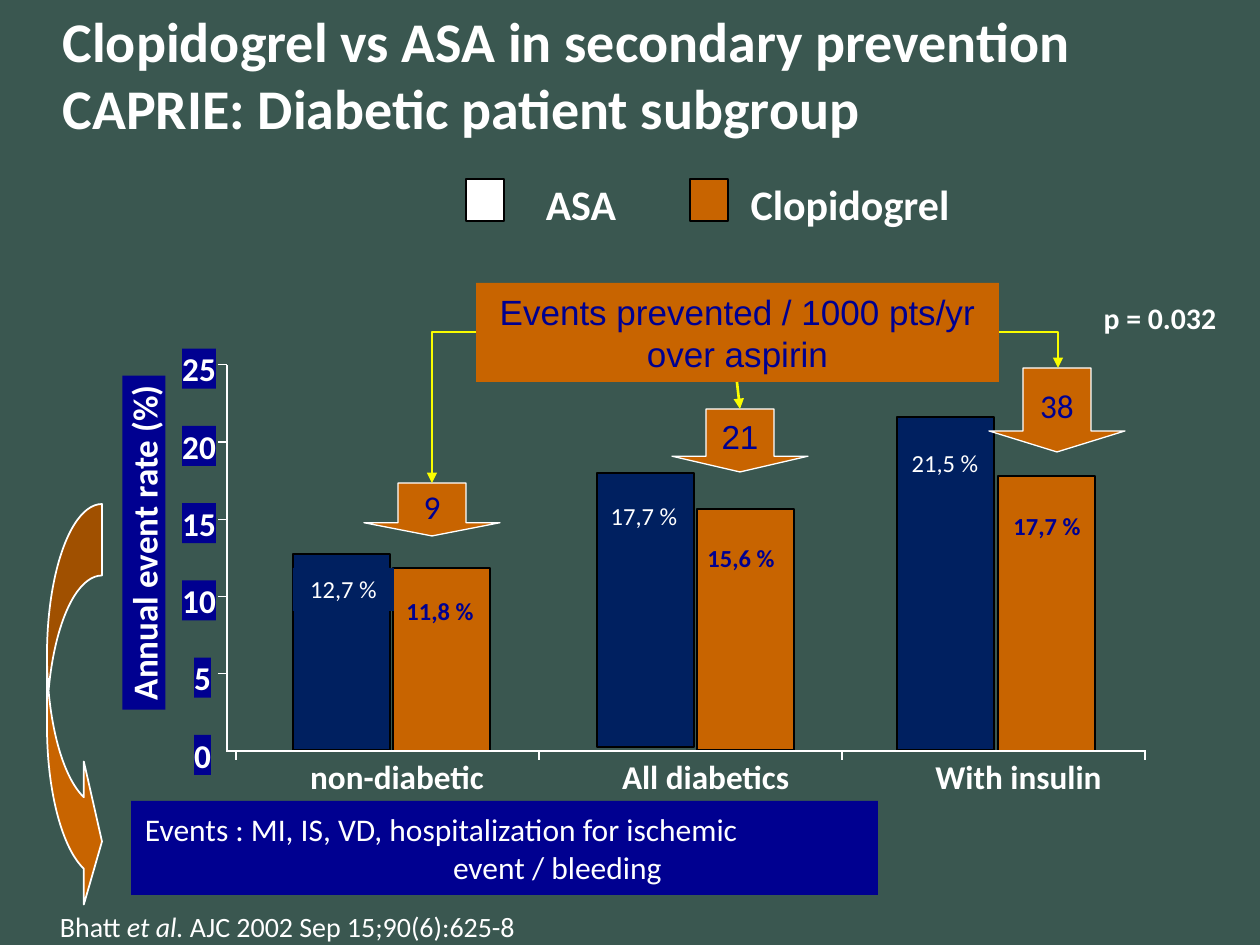
from lxml import etree
from pptx import Presentation
from pptx.dml.color import RGBColor
from pptx.enum.shapes import MSO_CONNECTOR, MSO_SHAPE
from pptx.enum.text import MSO_ANCHOR, MSO_AUTO_SIZE, PP_ALIGN
from pptx.oxml.ns import qn
from pptx.util import Pt

RECT, DOWN, CURVED = MSO_SHAPE.RECTANGLE, MSO_SHAPE.DOWN_ARROW, MSO_SHAPE.CURVED_RIGHT_ARROW
STRAIGHT, ELBOW = MSO_CONNECTOR.STRAIGHT, MSO_CONNECTOR.ELBOW
LEFT, CENTER = PP_ALIGN.LEFT, PP_ALIGN.CENTER
TOP, MIDDLE = MSO_ANCHOR.TOP, MSO_ANCHOR.MIDDLE
SCALE = 914400 / 126
WHITE, BLACK, YELLOW = "FFFFFF", "000000", "FAFD00"
BLUE, NAVY, ORANGE = "000090", "002060", "C86400"
rgb = RGBColor.from_string


def write(para, text, size=19, color=WHITE, bold=False, italic=False, font="Calibri", align=CENTER):
    """Append formatted text to a paragraph; a newline becomes a line break."""
    para.alignment = align
    for i, part in enumerate(text.split("\n")):
        if i:
            para.add_line_break()
        run = para.add_run()
        run.text = part
        run.font.size, run.font.name = Pt(size), font
        run.font.bold, run.font.italic = bold, italic
        run.font.color.rgb = rgb(color)


def put(spot, text="", fill=None, line=None, kind=RECT, pad=(0, 0), wrap=False, anchor=TOP, **style):
    """Place a shape, or a text box when there is no fill."""
    place = [round(n * SCALE) for n in spot]
    if fill:
        shape = slide.shapes.add_shape(kind, *place)
        shape.shadow.inherit = False
        shape.fill.solid()
        shape.fill.fore_color.rgb = rgb(fill)
        if line:
            shape.line.color.rgb = rgb(line)
            shape.line.width = Pt(0.75)
        else:
            shape.line.fill.background()
    else:
        shape = slide.shapes.add_textbox(*place)
    frame = shape.text_frame
    frame.word_wrap, frame.vertical_anchor = wrap, anchor
    frame.margin_left = frame.margin_right = round(pad[0] * SCALE)
    frame.margin_top = frame.margin_bottom = round(pad[1] * SCALE)
    if text:
        write(frame.paragraphs[0], text, **style)
    return shape


deck = Presentation()
deck.slide_width, deck.slide_height = round(1260 * SCALE), round(945 * SCALE)
slide = deck.slides.add_slide(deck.slide_layouts[5])
slide.background.fill.solid()
slide.background.fill.fore_color.rgb = rgb("3A5750")

# Title
title = slide.shapes.title
title.left, title.top = 0, 0
title.width, title.height = deck.slide_width, round(147 * SCALE)
frame = title.text_frame
frame.auto_size, frame.vertical_anchor = MSO_AUTO_SIZE.NONE, MIDDLE
para = frame.paragraphs[0]
write(para, "Clopidogrel vs ASA in secondary prevention\nCAPRIE: Diabetic patient subgroup",
      size=32, bold=True, align=LEFT)
para._p.get_or_add_pPr().set("marL", str(round(50 * SCALE)))

# Event notes
PAD = (14, 6)
note = put((131, 801, 747, 94), "Events : MI, IS, VD, hospitalization for ischemic",
           BLUE, pad=PAD, wrap=True, anchor=MIDDLE, size=18, align=LEFT)
para = note.text_frame.add_paragraph()
write(para, "event / bleeding", size=18, align=LEFT)
para._p.get_or_add_pPr().set("marL", str(round(308 * SCALE)))
put((476, 283, 523, 99), "Events prevented / 1000 pts/yr\nover aspirin", ORANGE,
    pad=(14, 8), wrap=True, size=20, color=BLUE, font="Arial")

# Bars: left, top, height
bars = {
    NAVY: [(293, 554, 196), (597, 473, 274), (897, 417, 333)],
    ORANGE: [(393, 568, 183), (697, 509, 241), (998, 476, 275)],
}
for fill, group in bars.items():
    for x, y, h in group:
        put((x, y, 97, h), fill=fill, line=BLACK)

# Axes: thin lines as x1, y1, x2, y2
BASE, STEP, AXIS = 751, 77.25, 227
lines = [(AXIS, BASE, 1146, BASE), (AXIS, 365, AXIS, 752)]
lines += [(236 + 303 * i, 760, 236 + 303 * i, BASE) for i in range(4)]
lines += [(218, BASE - STEP * i, AXIS, BASE - STEP * i) for i in range(1, 6)]

for x, w, name in [(309, 176, "non-diabetic"), (621, 169, "All diabetics"), (934, 169, "With insulin")]:
    put((x, 756, w, 40), name, bold=True)
for i in range(6):
    x, w = (194, 17) if i < 2 else (182, 34)
    put((x, 735 - STEP * i, w, 40), str(5 * i), BLUE, bold=True)
put((-23, 521, 334, 43), " Annual event rate (%) ", BLUE, size=20, bold=True).rotation = 270

# Legend
for x, fill, left, w, name in [(466, WHITE, 531, 100, "ASA"), (690, ORANGE, 740, 220, "Clopidogrel")]:
    put((x, 179, 38, 42), fill=fill, line=BLACK)
    put((left, 179, w, 50), name, size=24, bold=True)

# Bar values
values = [
    ((293, 568, 101, 43), "12,7 %", NAVY, WHITE),
    ((393, 590, 94, 73), "11,8 %", None, BLUE),
    ((597, 495, 94, 43), "17,7 %", None, WHITE),
    ((694, 537, 94, 43), "15,6 %", None, BLUE),
    ((898, 442, 94, 43), "21,5 %", None, WHITE),
    ((1000, 505, 94, 73), "17,7 %", ORANGE, BLUE),
]
for spot, text, fill, color in values:
    put(spot, text, fill, pad=(2, 6), size=14, color=color, bold=color == BLUE)

# Events prevented in each group
for x, y, h, text, font in [(672, 409, 63, "21", "Arial"), (364, 483, 53, "9", "Calibri"),
                            (989, 368, 84, "38", "Calibri")]:
    put((x, y, 136, h), text, ORANGE, WHITE, DOWN, PAD, anchor=MIDDLE, color=BLUE,
        font=font).adjustments[1] = 0.25

put((1080, 294, 160, 49), "p = 0.032", pad=(13, 6), size=17, bold=True)
cite = put((47, 902, 523, 47), pad=(13, 6), wrap=True).text_frame.paragraphs[0]
cite.line_spacing = 1.05
for text, slant in [("Bhatt ", False), ("et al.", True), (" AJC 2002 Sep 15;90(6):625-8", False)]:
    write(cite, text, size=16, italic=slant, align=LEFT)

curve = put((47, 504, 55, 409), fill=ORANGE, line=WHITE, kind=CURVED)
curve.line.width = Pt(1)
for i, ratio in enumerate((1.3, 2.6, 0.33)):
    curve.adjustments[i] = ratio

# Axis lines and yellow pointers
links = [(STRAIGHT, ends, WHITE, 0.75) for ends in lines]
links += [
    (ELBOW, (476, 332, 432, 483), YELLOW, 1.5),
    (ELBOW, (999, 332, 1058, 368), YELLOW, 1.5),
    (STRAIGHT, (737, 382, 740, 409), YELLOW, 1.5),
]
for kind, ends, color, width in links:
    link = slide.shapes.add_connector(kind, *[round(n * SCALE) for n in ends])
    link.line.color.rgb = rgb(color)
    link.line.width = Pt(width)
    props = link._element.spPr
    if kind == ELBOW:
        props.find(qn("a:prstGeom")).set("prst", "bentConnector2")
    if color == YELLOW:
        etree.SubElement(props.find(qn("a:ln")), qn("a:tailEnd")).set("type", "triangle")
    etree.SubElement(props, qn("a:effectLst"))

deck.save("out.pptx")
